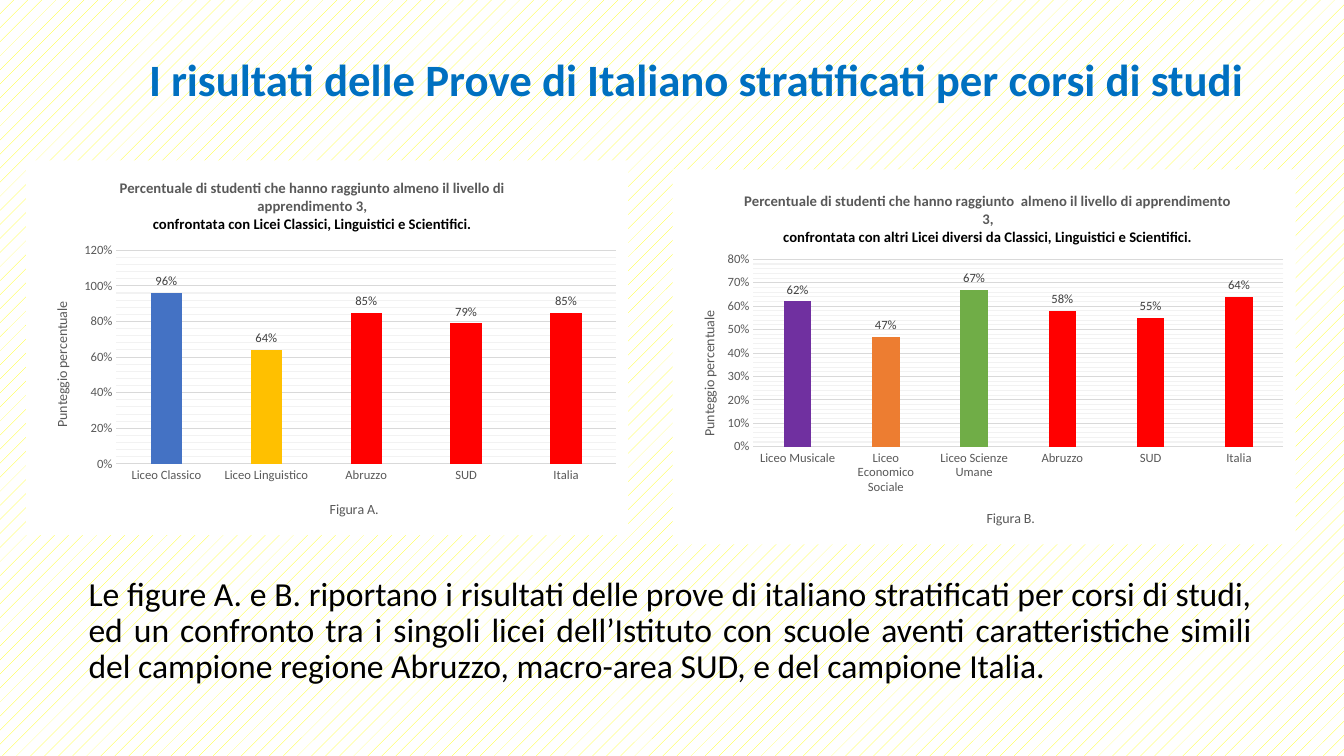
from dataclasses import dataclass

from pptx import Presentation
from pptx.chart.chart import Chart
from pptx.chart.data import CategoryChartData
from pptx.dml.color import RGBColor
from pptx.enum.chart import XL_CHART_TYPE, XL_LABEL_POSITION, XL_TICK_MARK
from pptx.enum.dml import MSO_PATTERN
from pptx.enum.text import MSO_ANCHOR, PP_ALIGN
from pptx.oxml import parse_xml
from pptx.oxml.ns import nsdecls, qn
from pptx.slide import Slide
from pptx.text.text import Font, TextFrame
from pptx.util import Inches, Pt

FONT = "Calibri"
COLORS = {
    "white": "FFFFFF", "black": "000000", "yellow": "FFFF00", "title": "0070C0",
    "grey": "595959", "label": "404040", "grid": "D9D9D9", "minor": "F2F2F2",
    "blue": "4472C4", "gold": "FFC000", "red": "FF0000",
    "purple": "7030A0", "orange": "ED7D31", "green": "70AD47",
}


@dataclass
class Bar:
    name: str
    value: float
    color: str


@dataclass
class Graph:
    box: tuple[float, float, float, float]
    lines: tuple[str, str]
    figure: str
    bars: list[Bar]
    top: float
    step: float
    plot: tuple[float, float, float, float]
    head: tuple[float, float]


@dataclass
class Label:
    box: tuple[float, float, float, float]
    text: str
    size: float
    color: str
    bold: bool
    align: PP_ALIGN


REGIONS = ("Abruzzo", "SUD", "Italia")


def red_bars(*values: float) -> list[Bar]:
    return [Bar(name, value, "red") for name, value in zip(REGIONS, values)]


GRAPHS = [
    Graph(
        (0.26, 1.59, 5.97, 3.72),
        ("Percentuale di studenti che hanno raggiunto almeno il livello di apprendimento 3,",
         "confrontata con Licei Classici, Linguistici e Scientifici."),
        "Figura A.",
        [Bar("Liceo Classico", 0.96, "blue"), Bar("Liceo Linguistico", 0.64, "gold"),
         *red_bars(0.85, 0.79, 0.85)],
        1.2, 0.2, (0.15, 0.24, 0.83, 0.57), (0.15, 0.04),
    ),
    Graph(
        (6.67, 1.68, 6.18, 3.72),
        ("Percentuale di studenti che hanno raggiunto  almeno il livello di apprendimento 3,",
         "confrontata con altri Licei diversi da Classici, Linguistici e Scientifici."),
        "Figura B.",
        [Bar("Liceo Musicale", 0.62, "purple"), Bar("Liceo Economico Sociale", 0.47, "orange"),
         Bar("Liceo Scienze Umane", 0.67, "green"), *red_bars(0.58, 0.55, 0.64)],
        0.8, 0.1, (0.13, 0.24, 0.85, 0.5), (0.11, 0.05),
    ),
]

LABELS = [
    Label((1.16, 0.27, 11.5, 1.09),
          "I risultati delle Prove di Italiano stratificati per corsi di studi",
          32, "title", True, PP_ALIGN.CENTER),
    Label((0.78, 5.54, 11.74, 1.45),
          "Le figure A. e B. riportano i risultati delle prove di italiano stratificati "
          "per corsi di studi, ed un confronto tra i singoli licei dell’Istituto con scuole "
          "aventi caratteristiche simili del campione regione Abruzzo, macro-area SUD, "
          "e del campione Italia.",
          24, "black", False, PP_ALIGN.JUSTIFY),
]


def rgb(name: str) -> RGBColor:
    return RGBColor.from_string(COLORS[name])


def style(font: Font, size: float, color: str, bold: bool = False) -> None:
    font.name, font.size, font.bold = FONT, Pt(size), bold
    font.color.rgb = rgb(color)


def write(frame: TextFrame, lines: tuple[str, ...], size: float,
          colors: tuple[str, ...], bold: bool = False) -> None:
    frame.text = "\n".join(lines)
    for para, color in zip(frame.paragraphs, colors):
        style(para.font, size, color, bold)


def paint(color: str) -> str:
    return f'<a:solidFill><a:srgbClr val="{COLORS[color]}"/></a:solidFill>'


def shape_xml(inner: str):
    return parse_xml(f'<c:spPr {nsdecls("c", "a")}>{inner}</c:spPr>')


def place(node, *spots: float) -> None:
    """Pin a title or the plot area at fractions of the chart."""
    for old in node.findall(qn("c:layout")):
        node.remove(old)
    target = '<c:layoutTarget val="inner"/>' if len(spots) == 4 else ""
    modes = '<c:xMode val="edge"/><c:yMode val="edge"/>'
    sizes = "".join(f'<c:{key} val="{spot}"/>' for key, spot in zip("xywh", spots))
    layout = parse_xml(f'<c:layout {nsdecls("c")}><c:manualLayout>{target}{modes}{sizes}'
                       '</c:manualLayout></c:layout>')
    text = node.find(qn("c:tx"))
    node.insert(0 if text is None else node.index(text) + 1, layout)


def style_axes(chart: Chart, graph: Graph) -> None:
    cats, vals = chart.category_axis, chart.value_axis
    for axis, name in ((cats, graph.figure), (vals, "Punteggio percentuale")):
        axis.major_tick_mark = axis.minor_tick_mark = XL_TICK_MARK.NONE
        style(axis.tick_labels.font, 9, "grey")
        write(axis.axis_title.text_frame, (name,), 10, ("grey",))
    vals.has_major_gridlines = vals.has_minor_gridlines = True
    for line in (cats.format.line, vals.major_gridlines.format.line):
        line.color.rgb = rgb("grid")
        line.width = Pt(0.75)
    vals.format.line.fill.background()
    vals.minimum_scale, vals.maximum_scale = 0, graph.top
    vals.major_unit, vals.minor_unit = graph.step, round(graph.step / 5, 2)
    vals.tick_labels.number_format = "0%"
    vals.tick_labels.number_format_is_linked = False


def style_bars(chart: Chart, bars: list[Bar]) -> None:
    plot = chart.plots[0]
    plot.gap_width, plot.overlap = 219, -27
    plot.vary_by_categories = False
    for index, bar in enumerate(bars):
        fill = plot.series[0].points[index].format.fill
        fill.solid()
        fill.fore_color.rgb = rgb(bar.color)
    plot.has_data_labels = True
    labels = plot.data_labels
    labels.show_value = True
    labels.position = XL_LABEL_POSITION.OUTSIDE_END
    labels.number_format, labels.number_format_is_linked = "0%", False
    style(labels.font, 9, "label")


def add_graph(slide: Slide, graph: Graph) -> None:
    data = CategoryChartData(number_format="0%")
    data.categories = [bar.name for bar in graph.bars]
    data.add_series("Series 1", [bar.value for bar in graph.bars])
    chart = slide.shapes.add_chart(
        XL_CHART_TYPE.COLUMN_CLUSTERED, *map(Inches, graph.box), data).chart
    style(chart.font, 10, "black")
    chart.has_legend = False
    write(chart.chart_title.text_frame, graph.lines, 10.5, ("grey", "black"), True)
    style_axes(chart, graph)
    style_bars(chart, graph.bars)

    # White panel, minor grid and fixed positions
    root = chart._chartSpace
    root.find(qn("c:chart")).addnext(shape_xml(paint("white") + "<a:ln><a:noFill/></a:ln>"))
    root.xpath(".//c:minorGridlines")[0].append(
        shape_xml(f'<a:ln w="{Pt(0.75)}">{paint("minor")}</a:ln>'))
    for route, spots in (("c:chart/c:title", graph.head),
                         ("c:chart/c:plotArea", graph.plot),
                         ("c:chart/c:plotArea/c:catAx/c:title", (0.5, 0.9)),
                         ("c:chart/c:plotArea/c:valAx/c:title", (0.04, 0.37))):
        place(root.xpath(route)[0], *spots)


def add_label(slide: Slide, label: Label) -> None:
    frame = slide.shapes.add_textbox(*map(Inches, label.box)).text_frame
    frame.word_wrap = True
    frame.vertical_anchor = MSO_ANCHOR.MIDDLE
    write(frame, (label.text,), label.size, (label.color,), label.bold)
    frame.paragraphs[0].alignment = label.align
    frame.paragraphs[0].line_spacing = 0.9


def main() -> None:
    deck = Presentation()
    deck.slide_width, deck.slide_height = Inches(13.33), Inches(7.5)
    slide = deck.slides.add_slide(deck.slide_layouts[6])
    # Patterned background
    fill = slide.background.fill
    fill.patterned()
    fill.pattern = MSO_PATTERN.PERCENT_5
    fill.fore_color.rgb, fill.back_color.rgb = rgb("yellow"), rgb("white")
    # Text and charts
    for label in LABELS:
        add_label(slide, label)
    for graph in GRAPHS:
        add_graph(slide, graph)
    deck.save("out.pptx")


if __name__ == "__main__":
    main()
